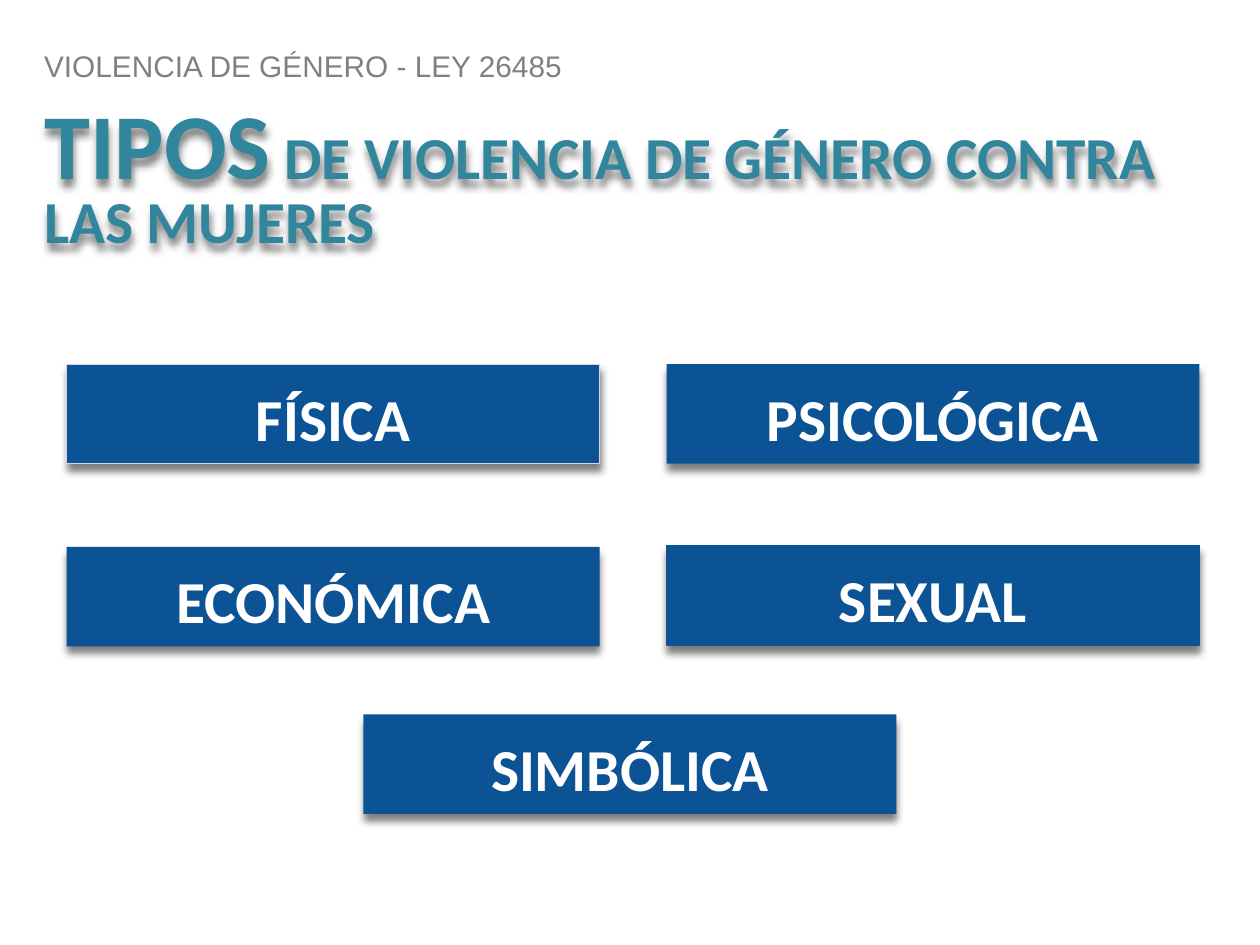
from lxml import etree
from pptx import Presentation
from pptx.dml.color import RGBColor
from pptx.enum.shapes import MSO_SHAPE
from pptx.enum.text import MSO_ANCHOR as ANCHOR, MSO_AUTO_SIZE as AUTO, PP_ALIGN as ALIGN
from pptx.oxml.ns import qn
from pptx.util import Inches, Pt

GREY = RGBColor(0x80, 0x80, 0x80)
TEAL = RGBColor(0x31, 0x85, 0x9C)
BLUE = RGBColor(0x0B, 0x53, 0x94)
LILAC = RGBColor(0xD9, 0xD2, 0xE9)
WHITE = RGBColor(0xFF, 0xFF, 0xFF)

BOX_W, BOX_H = 4.23, 0.79
LEFT, RIGHT = 0.53, 5.29
CENTER = (10 - BOX_W) / 2


def add_run(p, text, size, color, font="Calibri", bold=True):
    r = p.add_run()
    r.text = text
    r.font.size = Pt(size)
    r.font.name = font
    r.font.bold = bold
    r.font.color.rgb = color


class SlideBuilder:
    def __init__(self, prs):
        self.s = prs.slides.add_slide(prs.slide_layouts[2])

    def frame(self, sp, inset, anchor, align, spacing):
        tf = sp.text_frame
        tf.word_wrap = True
        tf.auto_size = AUTO.NONE
        tf.vertical_anchor = anchor
        tf.margin_left = tf.margin_right = Inches(inset)
        tf.margin_top = tf.margin_bottom = Inches(inset)
        p = tf.paragraphs[0]
        p.alignment = align
        p.line_spacing = spacing
        return p

    def shadow(self, sp):
        sp.shadow.inherit = False
        effects = sp._element.spPr.find(qn("a:effectLst"))
        outer = etree.SubElement(
            effects, qn("a:outerShdw"), blurRad=str(Pt(4.5)),
            dist=str(Pt(3.8)), dir="5400000", algn="bl", rotWithShape="0")
        color = etree.SubElement(outer, qn("a:srgbClr"), val="000000")
        etree.SubElement(color, qn("a:alpha"), val="50000")

    def heading(self, sp, x, y, w, h, anchor):
        sp.left, sp.top = Inches(x), Inches(y)
        sp.width, sp.height = Inches(w), Inches(h)
        p = self.frame(sp, 0.04, anchor, ALIGN.LEFT, 0.8)
        p.space_before = Pt(0)
        return p

    def kicker(self, text):
        p = self.heading(self.s.placeholders[1], 0.31, 0.35, 8.59, 0.35, ANCHOR.BOTTOM)
        add_run(p, text, 17, GREY, font="Arial", bold=False)

    def title(self, lead, rest):
        sp = self.s.shapes.title
        p = self.heading(sp, 0.31, 0.82, 9.38, 1.12, ANCHOR.TOP)
        add_run(p, lead, 53, TEAL)
        add_run(p, rest, 34, TEAL)
        self.shadow(sp)

    def box(self, text, x, y, line=None):
        sp = self.s.shapes.add_shape(
            MSO_SHAPE.RECTANGLE, Inches(x), Inches(y), Inches(BOX_W), Inches(BOX_H))
        sp.fill.solid()
        sp.fill.fore_color.rgb = BLUE
        if line is None:
            sp.line.fill.background()
        else:
            sp.line.color.rgb = line
            sp.line.width = Pt(0.75)
        self.shadow(sp)
        p = self.frame(sp, 0.07, ANCHOR.MIDDLE, ALIGN.CENTER, 1.1)
        p.space_before = p.space_after = Pt(5.6)
        add_run(p, text, 34, WHITE)


def main():
    prs = Presentation()
    prs.slide_width, prs.slide_height = Inches(10), Inches(7.5)
    slide = SlideBuilder(prs)
    slide.kicker("VIOLENCIA DE GÉNERO - LEY 26485")
    slide.title("TIPOS", " DE VIOLENCIA DE GÉNERO CONTRA LAS MUJERES")
    for text, x, y, line in [
        ("PSICOLÓGICA", RIGHT, 2.89, None),
        ("SIMBÓLICA", CENTER, 5.67, None),
        ("FÍSICA", LEFT, 2.89, LILAC),
        ("SEXUAL", RIGHT, 4.33, BLUE),
        ("ECONÓMICA", LEFT, 4.34, None),
    ]:
        slide.box(text, x, y, line)
    prs.save("out.pptx")


if __name__ == "__main__":
    main()
